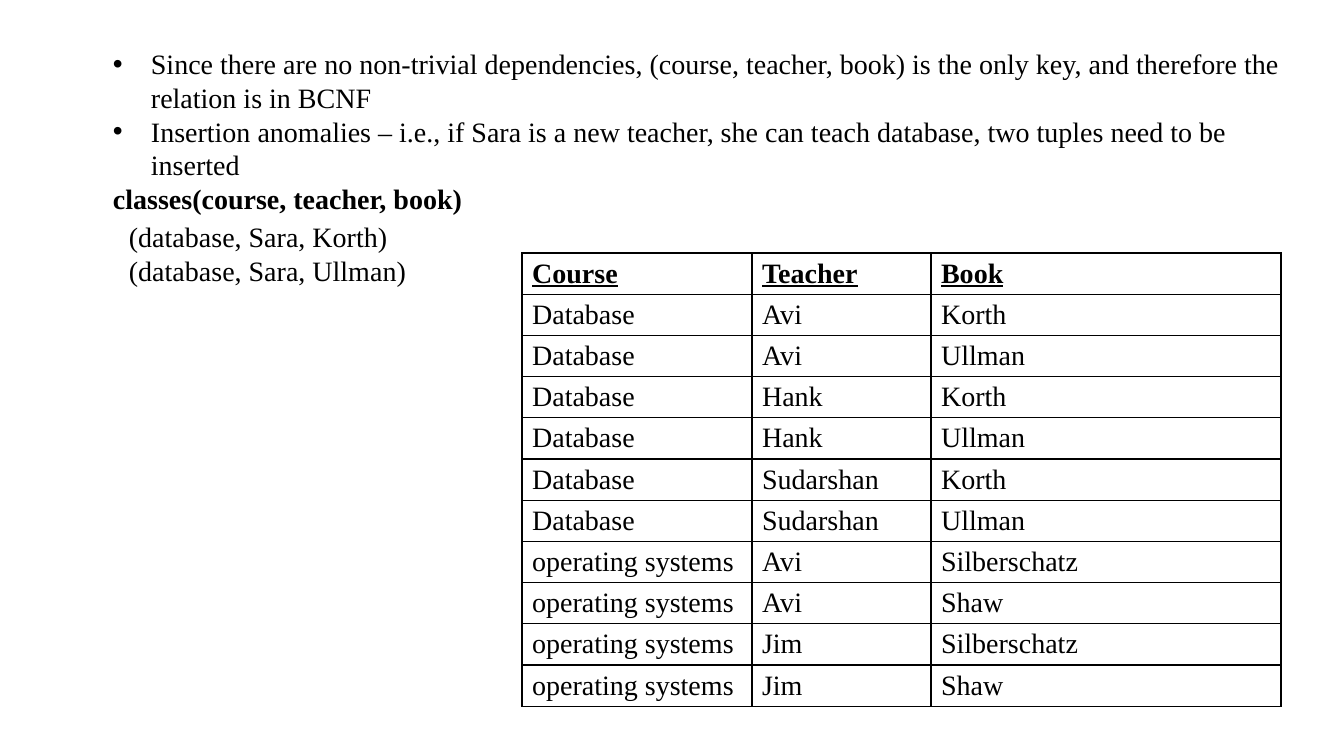
from dataclasses import dataclass
from itertools import product

from lxml import etree
from pptx import Presentation
from pptx.dml.color import RGBColor
from pptx.enum.text import MSO_AUTO_SIZE
from pptx.oxml.ns import qn
from pptx.slide import Slide
from pptx.table import _Cell
from pptx.text.text import _Paragraph
from pptx.util import Emu, Pt

GROW = MSO_AUTO_SIZE.SHAPE_TO_FIT_TEXT
COLORS = {"ink": "000000"}
FONT = "Times New Roman"
TEXT_SIZE = 20
BLANK_LAYOUT = 6
EMU_PER_PX = 914400 / 100.8

BULLET_INDENT = 38
TABLE_LEFT, TABLE_TOP = 522, 253
COLUMN_WIDTHS = (230, 179, 350)
ROW_HEIGHT = 41
BORDER_WIDTH = 1


@dataclass(frozen=True)
class Line:
    text: str
    bold: bool = False
    bulleted: bool = False


@dataclass(frozen=True)
class TextBlock:
    left: int
    top: int
    width: int
    height: int
    lines: tuple[Line, ...]


@dataclass(frozen=True)
class CourseOffering:
    course: str
    teachers: tuple[str, ...]
    books: tuple[str, ...]


TEXT_BLOCKS = (
    TextBlock(103, 42, 1191, 179, (
        Line("Since there are no non-trivial dependencies, (course, teacher, book) "
             "is the only key, and therefore the relation is in BCNF", bulleted=True),
        Line("Insertion anomalies – i.e., if Sara is a new teacher, she can teach "
             "database, two tuples need to be inserted", bulleted=True),
        Line("classes(course, teacher, book)", bold=True),
    )),
    TextBlock(119, 215, 324, 78, (
        Line("(database, Sara, Korth)"),
        Line("(database, Sara, Ullman)"),
    )),
)
HEADINGS = ("Course", "Teacher", "Book")
OFFERINGS = (
    CourseOffering("Database", ("Avi", "Hank", "Sudarshan"), ("Korth", "Ullman")),
    CourseOffering("operating systems", ("Avi", "Jim"), ("Silberschatz", "Shaw")),
)


def px(length: int) -> Emu:
    return Emu(round(length * EMU_PER_PX))


def add_run(paragraph: _Paragraph, text: str, bold: bool = False,
            underline: bool = False) -> None:
    run = paragraph.add_run()
    run.text = text
    run.font.name = FONT
    run.font.size = Pt(TEXT_SIZE)
    run.font.bold = bold
    run.font.underline = underline
    run.font.color.rgb = RGBColor.from_string(COLORS["ink"])


def add_bullet(paragraph: _Paragraph) -> None:
    properties = paragraph._p.get_or_add_pPr()
    properties.set("marL", str(px(BULLET_INDENT)))
    properties.set("indent", str(-px(BULLET_INDENT)))
    etree.SubElement(properties, qn("a:buFont"), typeface="Arial")
    etree.SubElement(properties, qn("a:buChar"), char="•")


def add_text_block(slide: Slide, block: TextBlock) -> None:
    shape = slide.shapes.add_textbox(
        px(block.left), px(block.top), px(block.width), px(block.height))
    frame = shape.text_frame
    frame.word_wrap = True
    frame.auto_size = GROW
    for index, line in enumerate(block.lines):
        paragraph = frame.add_paragraph() if index else frame.paragraphs[0]
        if line.bulleted:
            add_bullet(paragraph)
        add_run(paragraph, line.text, bold=line.bold)


def add_borders(cell: _Cell) -> None:
    properties = cell._tc.get_or_add_tcPr()
    for position, side in enumerate(("lnL", "lnR", "lnT", "lnB")):
        border = etree.Element(qn(f"a:{side}"), w=str(Pt(BORDER_WIDTH)))
        fill = etree.SubElement(border, qn("a:solidFill"))
        etree.SubElement(fill, qn("a:srgbClr"), val=COLORS["ink"])
        properties.insert(position, border)


def add_classes_table(slide: Slide) -> None:
    rows = [HEADINGS]
    for offering in OFFERINGS:
        rows.extend(product((offering.course,), offering.teachers, offering.books))
    table = slide.shapes.add_table(
        len(rows), len(HEADINGS), px(TABLE_LEFT), px(TABLE_TOP),
        px(sum(COLUMN_WIDTHS)), px(ROW_HEIGHT * len(rows))).table
    table.first_row = False
    table.horz_banding = False
    for column, width in zip(table.columns, COLUMN_WIDTHS):
        column.width = px(width)
    for row_index, row in enumerate(rows):
        is_heading = row_index == 0
        table.rows[row_index].height = px(ROW_HEIGHT)
        for column_index, text in enumerate(row):
            cell = table.cell(row_index, column_index)
            cell.fill.background()
            add_borders(cell)
            add_run(cell.text_frame.paragraphs[0], text,
                    bold=is_heading, underline=is_heading)


def main() -> None:
    presentation = Presentation()
    presentation.slide_width = px(1344)
    presentation.slide_height = px(756)
    slide = presentation.slides.add_slide(presentation.slide_layouts[BLANK_LAYOUT])
    add_classes_table(slide)
    for block in TEXT_BLOCKS:
        add_text_block(slide, block)
    presentation.save("out.pptx")


if __name__ == "__main__":
    main()
